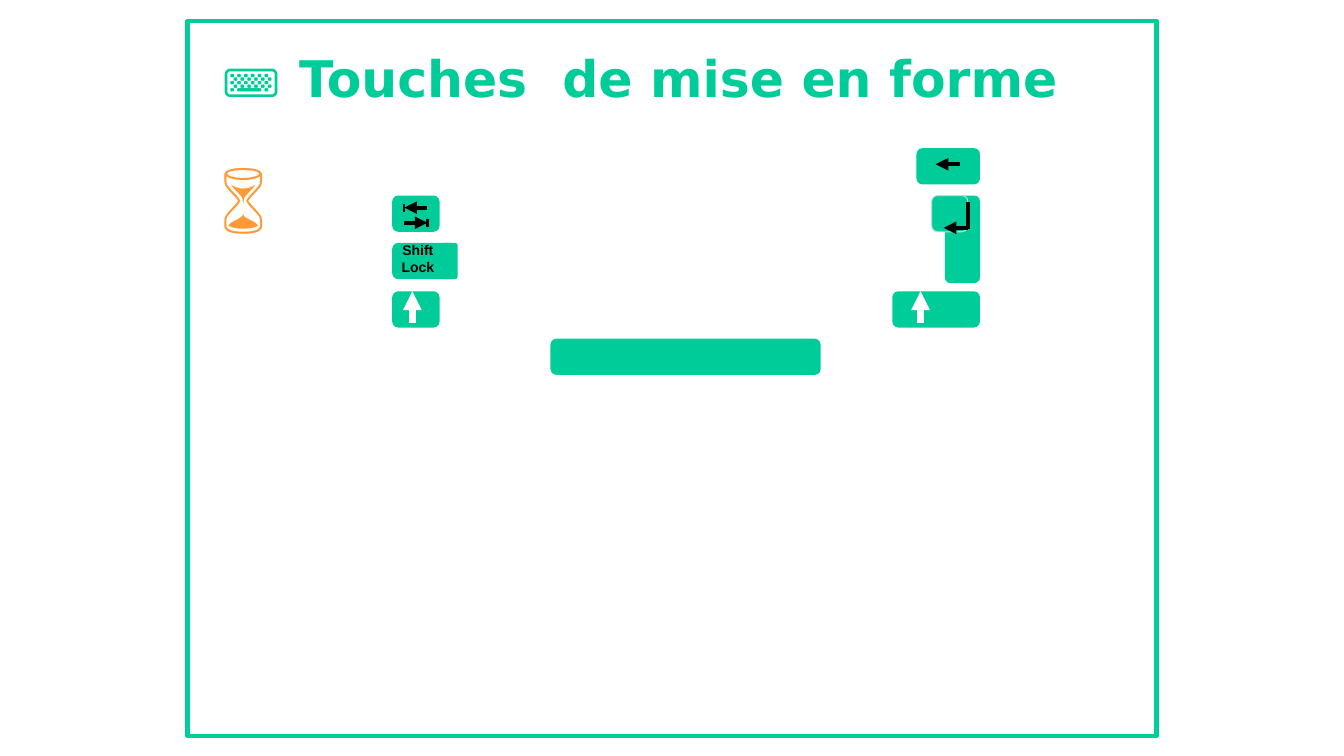
from lxml import etree
from pptx import Presentation
from pptx.dml.color import RGBColor
from pptx.enum.shapes import MSO_CONNECTOR, MSO_SHAPE
from pptx.enum.text import MSO_ANCHOR, MSO_AUTO_SIZE, PP_ALIGN
from pptx.oxml.ns import qn
from pptx.util import Pt

PX = 9144  # 100 px to the inch
GREEN = RGBColor(0x00, 0xCC, 0x99)
PALE_BLUE = RGBColor(0xBB, 0xE0, 0xE3)
ORANGE = RGBColor(0xFF, 0x99, 0x33)
BLACK = RGBColor(0x00, 0x00, 0x00)
WHITE = RGBColor(0xFF, 0xFF, 0xFF)
RECTANGLE = MSO_SHAPE.RECTANGLE
ROUNDED = MSO_SHAPE.ROUNDED_RECTANGLE
STRAIGHT = MSO_CONNECTOR.STRAIGHT
MIDDLE = MSO_ANCHOR.MIDDLE
GROW = MSO_AUTO_SIZE.SHAPE_TO_FIT_TEXT
CENTER = PP_ALIGN.CENTER

KEY_HEIGHT = 36
NUMBER, TAB, LOCK, SHIFT, SPACE = (147 + round(47.25 * row) for row in range(5))


def scaled(*lengths):
    return [length * PX for length in lengths]


def add_frame(page, left, top, width, height):
    frame = page.shapes.add_shape(RECTANGLE, *scaled(left, top, width, height))
    frame.shadow.inherit = False
    frame.fill.background()
    frame.line.color.rgb = GREEN
    frame.line.width = Pt(3)


def add_key(page, left, top, width, height=KEY_HEIGHT, outline=None):
    key = page.shapes.add_shape(ROUNDED, *scaled(left, top, width, height))
    key.shadow.inherit = False
    key.fill.solid()
    key.fill.fore_color.rgb = GREEN
    if outline is None:
        key.line.fill.background()
    else:
        key.line.color.rgb = outline
        key.line.width = Pt(0.75)
    return key


def add_stroke(page, start, end, color=BLACK, weight=3, arrow=False):
    stroke = page.shapes.add_connector(STRAIGHT, *scaled(*start, *end))
    stroke.line.color.rgb = color
    stroke.line.width = Pt(weight)
    if arrow:
        head = etree.SubElement(stroke.line._get_or_add_ln(), qn("a:tailEnd"))
        head.set("type", "triangle")
    etree.SubElement(stroke._element.spPr, qn("a:effectLst"))


def add_text_box(page, left, top, width, height, wrap=False):
    box = page.shapes.add_textbox(*scaled(left, top, width, height))
    box.text_frame.word_wrap = wrap
    return box.text_frame


def add_span(para, text, size, color, font="Arial", bold=False):
    span = para.add_run()
    span.text = text
    span.font.name = font
    span.font.size = Pt(size)
    span.font.bold = bold
    span.font.color.rgb = color


def add_title(page):
    frame = add_text_box(page, 210, 36, 921, 77, wrap=True)
    frame.auto_size = GROW
    para = frame.paragraphs[0]
    add_span(para, "⌨", 40, GREEN)
    add_span(para, " Touches  de mise en forme", 36, GREEN, "DejaVu Sans", True)


def add_hourglass(page):
    frame = add_text_box(page, 210, 147, 60, 90)
    frame.auto_size = GROW
    add_span(frame.paragraphs[0], "⌛", 48, ORANGE)


def add_keys(page):
    for left, top, width in [
        (909, NUMBER, 63),
        (389, TAB, 47),
        (389, LOCK, 63),
        (438, LOCK, 16),
        (389, SHIFT, 47),
        (885, SHIFT, 87),
        (546, SPACE, 268),
    ]:
        add_key(page, left, top, width)
    enter_stem = add_key(page, 911, 220, 87, 35)
    enter_stem.rotation = 90
    add_key(page, 924, TAB, 36, outline=PALE_BLUE)


def add_lock_label(page):
    frame = add_text_box(page, 383, 241, 63, 31)
    frame.margin_left = frame.margin_right = 0
    frame.margin_top = frame.margin_bottom = 0
    frame.vertical_anchor = MIDDLE
    for index, word in enumerate(("Shift", "Lock")):
        para = frame.add_paragraph() if index else frame.paragraphs[0]
        para.alignment = CENTER
        add_span(para, word, 10, BLACK, bold=True)


def add_key_symbols(page):
    # Backspace, then enter
    add_stroke(page, (952, 163), (928, 163), arrow=True)
    add_stroke(page, (960, 226), (936, 226), arrow=True)
    add_stroke(page, (960, 227), (960, 200))
    # Tab: an arrow each way, stopped by a bar
    for start, end, level in [(401, 424, 221), (424, 401, 206)]:
        add_stroke(page, (start, level), (end, level), arrow=True)
        add_stroke(page, (end, level - 4), (end, level + 4), weight=1.5)
    # Left and right shift
    for center in (409, 913):
        add_stroke(page, (center, 320), (center, 289), WHITE, 4.5, arrow=True)


def main():
    deck = Presentation()
    deck.slide_width, deck.slide_height = scaled(1333, 750)
    page = deck.slides.add_slide(deck.slide_layouts[6])
    add_frame(page, 186, 21, 961, 709)
    add_title(page)
    add_keys(page)
    add_lock_label(page)
    add_key_symbols(page)
    add_hourglass(page)
    deck.save("out.pptx")


if __name__ == "__main__":
    main()
